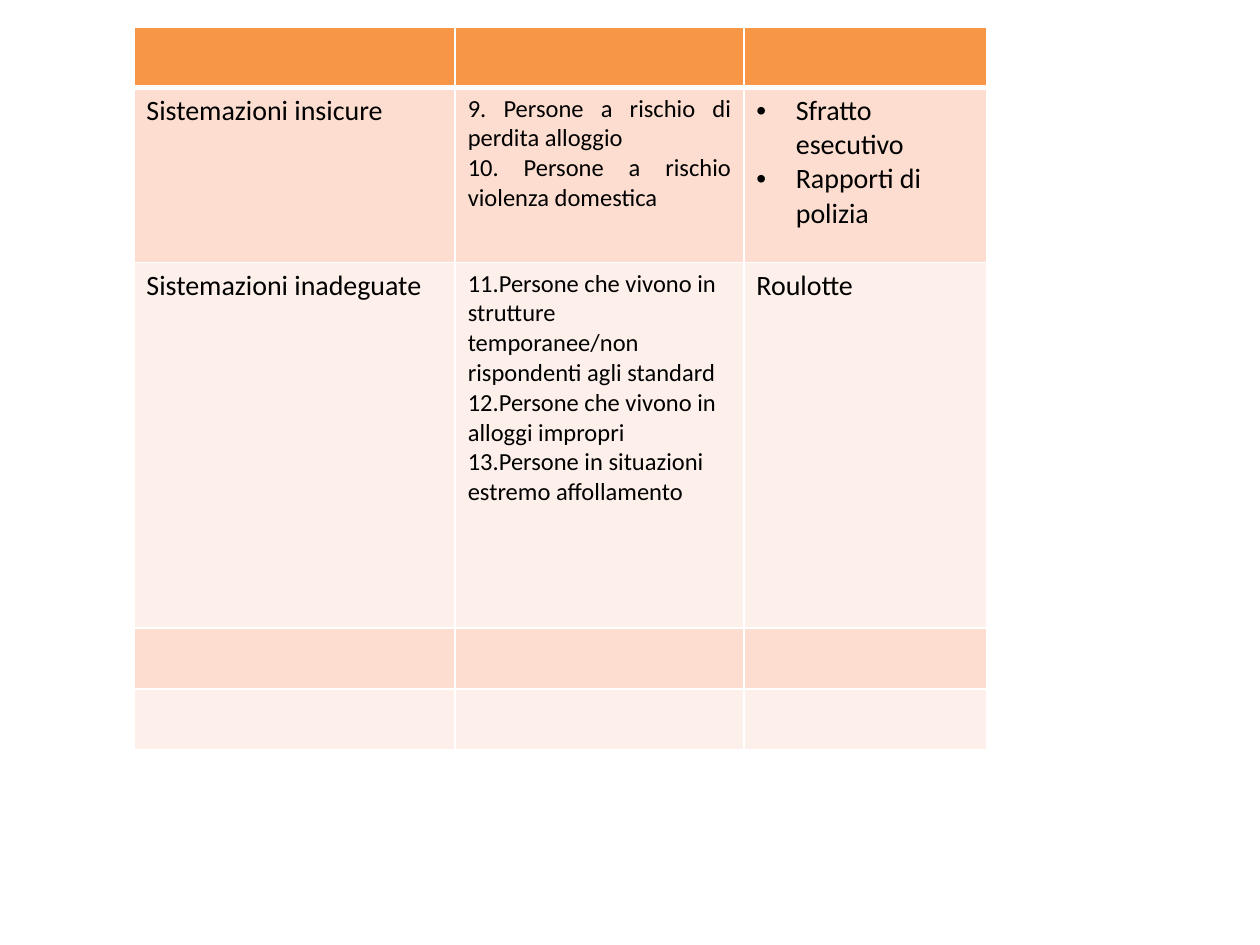
from pptx import Presentation
from pptx.dml.color import RGBColor
from pptx.enum import text
from pptx.oxml import ns, xmlchemy
from pptx.util import Pt

HEADER, DARK_BAND, LIGHT_BAND = "F79646", "FCDDCF", "FDEFE9"
COLUMN_WIDTHS = [183.6, 165, 139]
ROW_HEIGHTS = [34.7, 100, 209, 34.7, 34.7]


def color(value):
    return RGBColor.from_string(value)


def add_element(parent, tag, **attributes):
    element = xmlchemy.OxmlElement(tag)
    for name, value in attributes.items():
        element.set(name, str(value))
    parent.append(element)
    return element


def write(frame, content, size=16, align=text.PP_ALIGN.LEFT, bullet=False,
          font="Calibri", ink="000000"):
    """Fill a text frame, one paragraph per line of content."""
    for index, line in enumerate(content.split("\n")):
        para = frame.add_paragraph() if index else frame.paragraphs[0]
        para.alignment = align
        if bullet:
            properties = para._p.get_or_add_pPr()
            properties.set("marL", str(Pt(22.5)))
            properties.set("indent", str(Pt(-22.5)))
            add_element(properties, "a:buFont", typeface="Arial")
            add_element(properties, "a:buChar", char="•")
        span = para.add_run()
        span.text = line
        span.font.name = font
        span.font.size = Pt(size)
        span.font.color.rgb = color(ink)


class SlideBuilder:
    def __init__(self, page, line_color="FFFFFF"):
        self.page = page
        self.line_color = line_color

    def table(self, left, top, widths, heights):
        frame = self.page.shapes.add_table(
            len(heights), len(widths), Pt(left), Pt(top),
            Pt(sum(widths)), Pt(sum(heights)))
        grid = frame.table
        for column, width in zip(grid.columns, widths):
            column.width = Pt(width)
        for row, height in zip(grid.rows, heights):
            row.height = Pt(height)
        return grid

    def cell(self, cell, fill, top=1, bottom=1):
        """Draw the borders, then the fill, as the schema orders them."""
        properties = cell._tc.get_or_add_tcPr()
        for side, width in zip("LRTB", (1, 1, top, bottom)):
            line = add_element(properties, f"a:ln{side}", w=Pt(width))
            solid = add_element(line, "a:solidFill")
            add_element(solid, "a:srgbClr", val=self.line_color)
        cell.fill.solid()
        cell.fill.fore_color.rgb = color(fill)


def main():
    deck = Presentation()
    deck.slide_width, deck.slide_height = Pt(720), Pt(540)
    builder = SlideBuilder(deck.slides.add_slide(deck.slide_layouts[6]))

    # Table with a header row and alternating bands
    housing = builder.table(76.5, 15.3, COLUMN_WIDTHS, ROW_HEIGHTS)
    fills = [HEADER] + [DARK_BAND, LIGHT_BAND] * 2
    for row, fill in enumerate(fills):
        for column in range(len(COLUMN_WIDTHS)):
            builder.cell(housing.cell(row, column), fill,
                         top=3 if row == 1 else 1,
                         bottom=3 if row == 0 else 1)

    # Cell texts: row, column, content, format
    entries = [
        (1, 0, "Sistemazioni insicure", {}),
        (1, 1, "9. Persone a rischio di perdita alloggio\n"
               "10. Persone a rischio violenza domestica ",
         {"size": 14, "align": text.PP_ALIGN.JUSTIFY}),
        (1, 2, "Sfratto esecutivo\nRapporti di polizia", {"bullet": True}),
        (2, 0, "Sistemazioni inadeguate", {}),
        (2, 1, "11.Persone che vivono in strutture temporanee/non "
               "rispondenti agli standard\n"
               "12.Persone che vivono in alloggi impropri\n"
               "13.Persone in situazioni estremo affollamento", {"size": 14}),
        (2, 2, "Roulotte", {}),
    ]
    for row, column, content, style in entries:
        write(housing.cell(row, column).text_frame, content, **style)

    deck.save("out.pptx")


if __name__ == "__main__":
    main()
